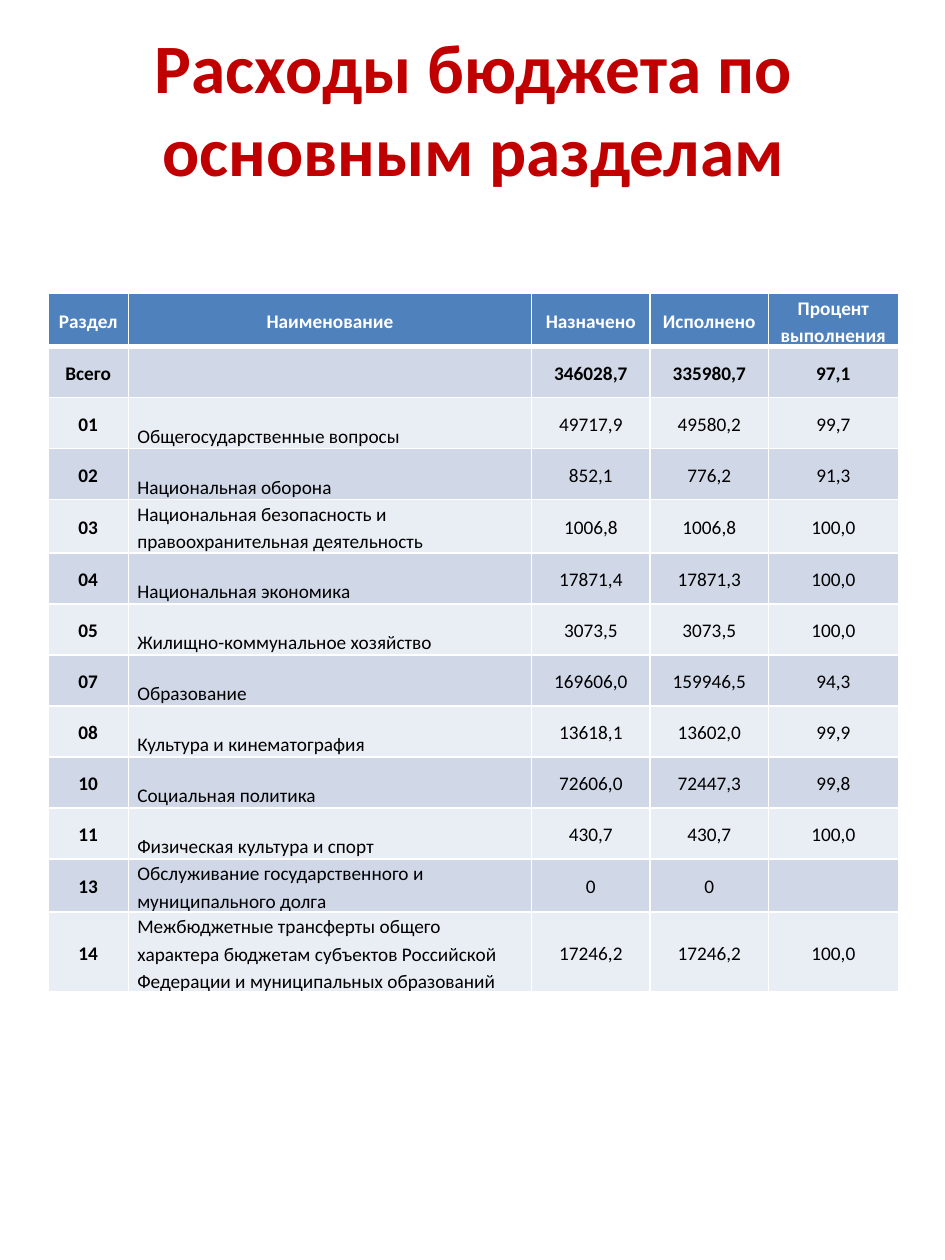
from typing import NamedTuple

from lxml.etree import SubElement
from pptx import Presentation
from pptx.dml.color import RGBColor
from pptx.enum.text import MSO_ANCHOR, PP_ALIGN
from pptx.oxml.ns import qn
from pptx.util import Inches, Pt

FONT = "Calibri"
WHITE, BLACK, RED, BLUE = "FFFFFF", "000000", "C00000", "4F81BD"
BANDS = ("D0D8E8", "E9EDF4")
COLUMN_WIDTHS = (0.64, 3.2, 0.94, 0.94, 1.03)
ROW_HEIGHT = 0.405


class BudgetRow(NamedTuple):
    section: str
    name: str
    planned: str
    spent: str
    percent: str


ROWS = (
    BudgetRow("Раздел", "Наименование", "Назначено", "Исполнено", "Процент выполнения"),
    BudgetRow("Всего", "", "346028,7", "335980,7", "97,1"),
    BudgetRow("01", "Общегосударственные вопросы", "49717,9", "49580,2", "99,7"),
    BudgetRow("02", "Национальная оборона", "852,1", "776,2", "91,3"),
    BudgetRow("03", "Национальная безопасность и правоохранительная деятельность",
              "1006,8", "1006,8", "100,0"),
    BudgetRow("04", "Национальная экономика", "17871,4", "17871,3", "100,0"),
    BudgetRow("05", "Жилищно-коммунальное хозяйство", "3073,5", "3073,5", "100,0"),
    BudgetRow("07", "Образование", "169606,0", "159946,5", "94,3"),
    BudgetRow("08", "Культура и кинематография", "13618,1", "13602,0", "99,9"),
    BudgetRow("10", "Социальная политика", "72606,0", "72447,3", "99,8"),
    BudgetRow("11", "Физическая культура и спорт", "430,7", "430,7", "100,0"),
    BudgetRow("13", "Обслуживание государственного и муниципального долга", "0", "0", ""),
    BudgetRow("14", "Межбюджетные трансферты общего характера бюджетам субъектов "
              "Российской Федерации и муниципальных образований",
              "17246,2", "17246,2", "100,0"),
)


def color(value: str) -> RGBColor:
    return RGBColor.from_string(value)


def style_font(font, size: float, hex_color: str, bold: bool) -> None:
    font.name = FONT
    font.size = Pt(size)
    font.bold = bold
    font.color.rgb = color(hex_color)


def add_border(cell, side: str, width: float) -> None:
    properties = cell._tc.get_or_add_tcPr()
    line = SubElement(properties, qn(f"a:ln{side}"), w=str(Pt(width)))
    fill = SubElement(line, qn("a:solidFill"))
    SubElement(fill, qn("a:srgbClr"), val=WHITE)


def add_title(slide, text: str) -> None:
    box = slide.shapes.add_textbox(Inches(0.38), Inches(0.4), Inches(6.75), Inches(0.9))
    frame = box.text_frame
    frame.word_wrap = True
    frame.vertical_anchor = MSO_ANCHOR.MIDDLE
    paragraph = frame.paragraphs[0]
    paragraph.alignment = PP_ALIGN.CENTER
    run = paragraph.add_run()
    run.text = text
    style_font(run.font, 39.6, RED, True)


def fill_cell(cell, text: str, row: int, column: int) -> None:
    is_header = row == 0
    is_name = column == 1 and row > 1

    # Borders come before the fill in the cell properties
    for side in "LRTB":
        under_header = (row, side) in ((0, "B"), (1, "T"))
        add_border(cell, side, 3 if under_header else 1)
    cell.fill.solid()
    cell.fill.fore_color.rgb = color(BLUE if is_header else BANDS[(row - 1) % 2])

    cell.margin_left = cell.margin_right = Inches(0.07)
    cell.margin_top = cell.margin_bottom = 0
    cell.vertical_anchor = MSO_ANCHOR.BOTTOM if is_name else MSO_ANCHOR.MIDDLE
    paragraph = cell.text_frame.paragraphs[0]
    paragraph.alignment = PP_ALIGN.LEFT if is_name else PP_ALIGN.CENTER
    paragraph.line_spacing = 1.15
    if text:
        run = paragraph.add_run()
        run.text = text
        style_font(run.font, 11, WHITE if is_header else BLACK, row < 2 or column == 0)
    else:
        paragraph.font.size = Pt(11)


def add_budget_table(slide, rows: tuple[BudgetRow, ...]) -> None:
    frame = slide.shapes.add_table(
        len(rows), len(COLUMN_WIDTHS), Inches(0.38), Inches(2.33),
        Inches(sum(COLUMN_WIDTHS)), Inches(ROW_HEIGHT * len(rows)))
    table = frame.table
    table.horz_banding = False
    for column, width in zip(table.columns, COLUMN_WIDTHS):
        column.width = Inches(width)
    for row_index, values in enumerate(rows):
        table.rows[row_index].height = Inches(ROW_HEIGHT)
        for column_index, text in enumerate(values):
            fill_cell(table.cell(row_index, column_index), text, row_index, column_index)


def main() -> None:
    presentation = Presentation()
    presentation.slide_width = Inches(7.5)
    presentation.slide_height = Inches(10)
    slide = presentation.slides.add_slide(presentation.slide_layouts[6])
    add_title(slide, "Расходы бюджета по основным разделам")
    add_budget_table(slide, ROWS)
    presentation.save("out.pptx")


if __name__ == "__main__":
    main()
